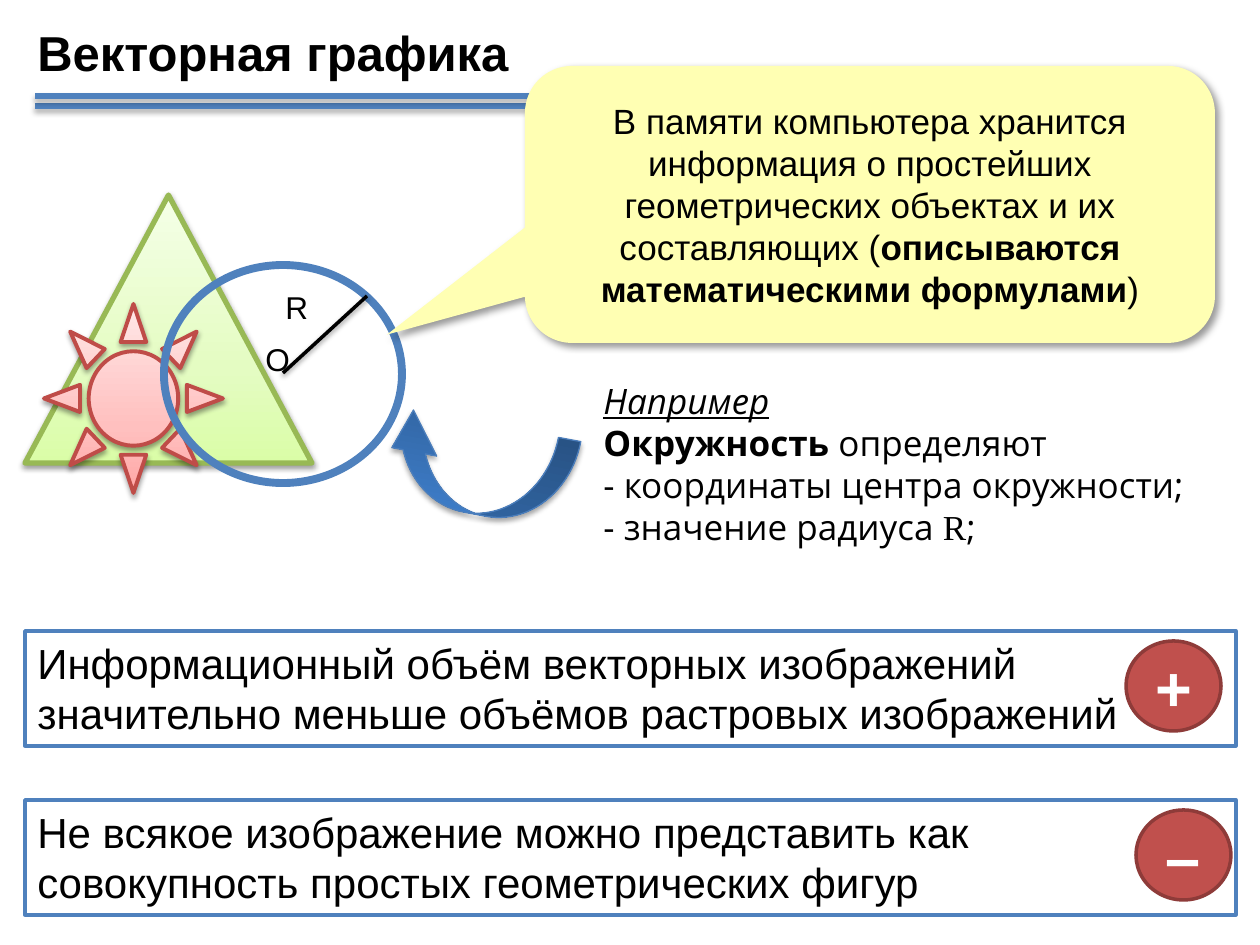
from lxml import etree
from pptx import Presentation
from pptx.dml.color import RGBColor
from pptx.enum.shapes import MSO_CONNECTOR, MSO_SHAPE
from pptx.enum.text import MSO_ANCHOR, PP_ALIGN
from pptx.oxml.ns import qn
from pptx.util import Pt

PX = 914400 / 126
LEFT, CENTER = PP_ALIGN.LEFT, PP_ALIGN.CENTER
TOP, MIDDLE = MSO_ANCHOR.TOP, MSO_ANCHOR.MIDDLE
STRAIGHT = MSO_CONNECTOR.STRAIGHT
RECT, OVAL = MSO_SHAPE.RECTANGLE, MSO_SHAPE.OVAL
TRIANGLE, SUN = MSO_SHAPE.ISOSCELES_TRIANGLE, MSO_SHAPE.SUN
CALLOUT, CURVED_ARROW = MSO_SHAPE.ROUNDED_RECTANGULAR_CALLOUT, MSO_SHAPE.CURVED_DOWN_ARROW

BLACK = RGBColor(0x00, 0x00, 0x00)
WHITE = RGBColor(0xFF, 0xFF, 0xFF)
BLUE = RGBColor(0x4F, 0x81, 0xBD)
ARROW_EDGE = RGBColor(0x4B, 0x7E, 0xBC)
GREEN = RGBColor(0x98, 0xB9, 0x55)
RED_EDGE = RGBColor(0xBF, 0x4C, 0x48)
RED = RGBColor(0xC0, 0x50, 0x4D)
DARK_RED = RGBColor(0x8E, 0x3B, 0x39)
YELLOW = RGBColor(0xFF, 0xFF, 0xB3)

GREEN_FADE = [(0, RGBColor(0xDA, 0xFD, 0xA7)), (35, RGBColor(0xE4, 0xFC, 0xC2)),
              (100, RGBColor(0xF5, 0xFF, 0xE7))]
RED_FADE = [(0, RGBColor(0xFF, 0xA6, 0xA5)), (35, RGBColor(0xFF, 0xC0, 0xBF)),
            (100, RGBColor(0xFF, 0xE7, 0xE7))]
BLUE_FADE = [(0, RGBColor(0x2F, 0x5F, 0x99)), (80, RGBColor(0x3D, 0x7C, 0xC7)),
             (100, RGBColor(0x3A, 0x7C, 0xCB))]

# Shadows: opacity %, blur pt, distance pt, direction in degrees
SOFT = (38, 3.1, 1.6, 90)
LOW = (35, 3.1, 1.8, 90)
DIAGONAL = (40, 4, 3, 45)


def px(value):
    return round(value * PX)


def add_effects(item, shadow):
    """Replace the theme effects with the given shadow, or with none."""
    effects = etree.SubElement(item._element.spPr, qn("a:effectLst"))
    if shadow:
        opacity, blur, distance, angle = shadow
        outer = etree.SubElement(effects, qn("a:outerShdw"), blurRad=str(Pt(blur)),
                                 dist=str(Pt(distance)), dir=str(angle * 60000),
                                 rotWithShape="0")
        color = etree.SubElement(outer, qn("a:srgbClr"), val=str(BLACK))
        etree.SubElement(color, qn("a:alpha"), val=str(opacity * 1000))


def fill_gradient(shape, stops):
    shape.fill.gradient()
    shape.fill.gradient_angle = 90
    stop_list = shape._element.spPr.find(".//" + qn("a:gsLst"))
    for old in list(stop_list):
        stop_list.remove(old)
    for position, color in stops:
        stop = etree.SubElement(stop_list, qn("a:gs"), pos=str(position * 1000))
        etree.SubElement(stop, qn("a:srgbClr"), val=str(color))


def add_shape(slide, kind, box, fill=None, line=None, width=0, shadow=None):
    shape = slide.shapes.add_shape(kind, *map(px, box))
    if isinstance(fill, list):
        fill_gradient(shape, fill)
    elif fill is not None:
        shape.fill.solid()
        shape.fill.fore_color.rgb = fill
    else:
        shape.fill.background()
    if line is not None:
        shape.line.color.rgb = line
        shape.line.width = Pt(width)
    else:
        shape.line.fill.background()
    add_effects(shape, shadow)
    return shape


def add_line(shapes, start, end, color, width, shadow):
    line = shapes.add_connector(STRAIGHT, *map(px, start + end))
    line.line.color.rgb = color
    line.line.width = Pt(width)
    add_effects(line, shadow)


def write(shape, *paragraphs, size=18, font="Arial", color=BLACK, align=LEFT, anchor=TOP):
    """Each paragraph is a list of (text, overrides) runs."""
    frame = shape.text_frame
    frame.word_wrap = True
    frame.vertical_anchor = anchor
    for index, runs in enumerate(paragraphs):
        paragraph = frame.add_paragraph() if index else frame.paragraphs[0]
        paragraph.alignment = align
        for text, style in runs:
            run = paragraph.add_run()
            run.text = text
            run.font.color.rgb = color
            run.font.name = style.get("font", font)
            run.font.size = Pt(style.get("size", size))
            run.font.bold = style.get("bold", False)
            run.font.italic = run.font.underline = style.get("stressed", False)


def add_text(slide, box, *paragraphs, **style):
    write(slide.shapes.add_textbox(*map(px, box)), *paragraphs, **style)


def add_header(slide, x, y):
    rules = slide.shapes.add_group_shape().shapes
    for offset in (90, 80):
        add_line(rules, (x + 674, y + offset), (x + 10, y + offset), BLUE, 3, LOW)
    add_text(slide, (x, y, 1235, 59), [("Векторная графика", {"bold": True})], size=28)


def add_drawing(slide, x, y):
    add_shape(slide, TRIANGLE, (x, y, 287, 268), GREEN_FADE, GREEN, 3, SOFT)
    add_shape(slide, SUN, (x + 19, y + 109, 179, 189), RED_FADE, RED_EDGE, 2.25, SOFT)
    add_shape(slide, OVAL, (x + 139, y + 70, 238, 218), line=BLUE, width=4.5)
    # Radius from the centre, with its letters
    add_line(slide.shapes, (x + 258, y + 178), (x + 342, y + 101), BLACK, 2, SOFT)
    for letter, left, top in (("R", 248, 87), ("O", 228, 139)):
        add_text(slide, (x + left, y + top, 39, 50), [(letter, {})])


def add_callout(slide, box):
    callout = add_shape(slide, CALLOUT, box, YELLOW, shadow=DIAGONAL)
    for index, value in enumerate((-0.7, 0.47, 0.17)):
        callout.adjustments[index] = value
    write(callout, [
        ("В памяти компьютера хранится информация о простейших "
         "геометрических объектах и их составляющих (", {}),
        ("описываются математическими формулами", {"bold": True}),
        (")", {}),
    ], size=20, align=CENTER, anchor=MIDDLE)


def add_example(slide, x, y):
    arrow = add_shape(slide, CURVED_ARROW, (x, y + 50, 193, 91), BLUE_FADE, ARROW_EDGE, 0.75, LOW)
    arrow.adjustments[2] = 0.45
    arrow.rotation = 10.7
    for flip in ("flipH", "flipV"):
        arrow._element.spPr.xfrm.set(flip, "1")
    add_text(slide, (x + 210, y, 625, 183),
             [("Например", {"stressed": True}), (" ", {})],
             [("Окружность ", {"bold": True}), ("определяют", {})],
             [("- координаты центра окружности;", {})],
             [("- значение радиуса ", {}), ("R", {"font": "Times New Roman"}), (";", {})],
             size=20, font="Open Sans")


def add_verdict(slide, x, y, text, sign, sign_left):
    panel = add_shape(slide, RECT, (x, y, 1211, 115), WHITE, BLUE, 2)
    write(panel, [(text, {})], size=24)
    badge = add_shape(slide, OVAL, (x + sign_left, y + 10, 95, 90), RED, DARK_RED, 2)
    write(badge, [(sign, {"size": 36, "bold": True}), (" ", {})],
          color=WHITE, align=CENTER, anchor=MIDDLE)


def main():
    deck = Presentation()
    deck.slide_width, deck.slide_height = px(1260), px(945)
    slide = deck.slides.add_slide(deck.slide_layouts[6])
    margin = 25
    add_drawing(slide, margin, 195)
    add_header(slide, margin, 16)
    add_callout(slide, (525, 66, 690, 277))
    add_example(slide, 381, 373)
    add_verdict(slide, margin, 631, "Информационный объём векторных изображений "
                "значительно меньше объёмов растровых изображений", "+", 1101)
    add_verdict(slide, margin, 800, "Не всякое изображение можно представить как "
                "совокупность простых геометрических фигур", "–", 1111)
    deck.save("out.pptx")


if __name__ == "__main__":
    main()
